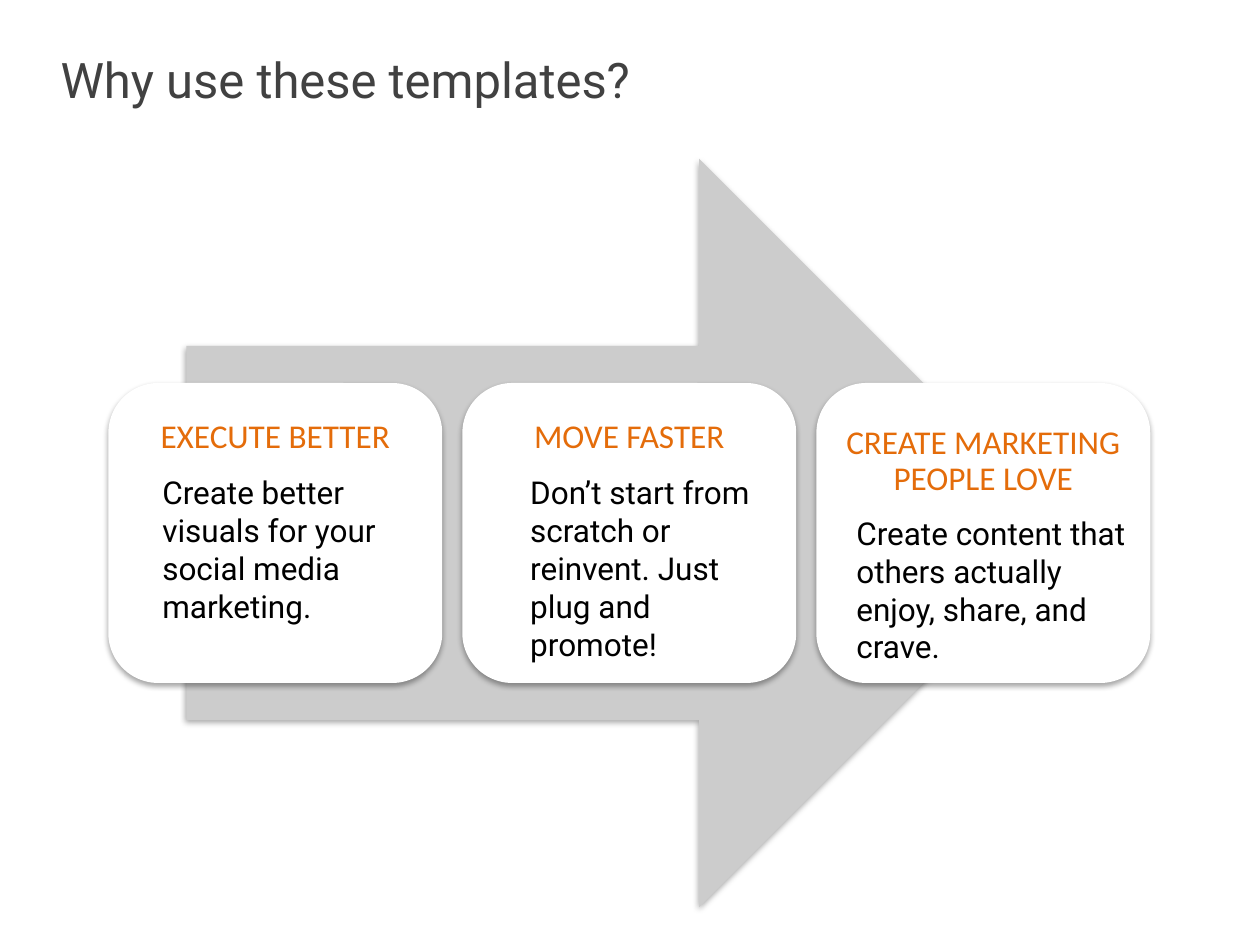
import lxml.etree
import pptx
import pptx.dml.color
import pptx.enum.shapes
import pptx.enum.text
import pptx.oxml.ns
import pptx.util

Pt = pptx.util.Pt
SHAPE = pptx.enum.shapes.MSO_SHAPE
ALIGN = pptx.enum.text.PP_ALIGN
CHARCOAL = pptx.dml.color.RGBColor(0x41, 0x41, 0x41)
GRAY = pptx.dml.color.RGBColor(0xCC, 0xCC, 0xCC)
WHITE = pptx.dml.color.RGBColor(0xFF, 0xFF, 0xFF)
ORANGE = pptx.dml.color.RGBColor(0xE4, 0x6C, 0x0A)
BLACK = pptx.dml.color.RGBColor(0, 0, 0)

CARD_WIDTH, CARD_HEIGHT, CARD_STEP = 190.8, 171.4, 202.3
CARDS = [
    ("EXECUTE BETTER", 21, "Create better visuals for your social media marketing.", 23.8, 48.2, 151.2),
    ("MOVE FASTER", 21, "Don’t start from scratch or reinvent. Just plug and promote!", 31.7, 48.2, 154.8),
    ("CREATE MARKETING PEOPLE LOVE", 24.5, "Create content that others actually enjoy, share, and crave.",
     15.8, 71.3, 175.7),
]


def write_text(frame, text, font_name, size, color, align=ALIGN.LEFT, spacing=1.0):
    """Fill a text frame with one wrapped, top-anchored paragraph."""
    frame.word_wrap = True
    frame.auto_size = pptx.enum.text.MSO_AUTO_SIZE.NONE
    frame.vertical_anchor = pptx.enum.text.MSO_ANCHOR.TOP
    para = frame.paragraphs[0]
    para.alignment = align
    para.line_spacing = spacing
    span = para.add_run()
    span.text = text
    span.font.name = font_name
    span.font.size = Pt(size)
    span.font.color.rgb = color


def add_shadowed_shape(page, kind, left, top, width, height, color):
    """Add a borderless filled shape with a soft shadow below it."""
    shape = page.shapes.add_shape(kind, Pt(left), Pt(top), Pt(width), Pt(height))
    shape.shadow.inherit = False
    shape.fill.solid()
    shape.fill.fore_color.rgb = color
    shape.line.fill.background()
    qn = pptx.oxml.ns.qn
    effects = shape.element.spPr.find(qn("a:effectLst"))
    shadow = lxml.etree.SubElement(
        effects, qn("a:outerShdw"), blurRad=str(Pt(3.1)), dist=str(Pt(1.8)),
        dir="5400000", rotWithShape="0")
    shade = lxml.etree.SubElement(shadow, qn("a:srgbClr"), val=str(BLACK))
    lxml.etree.SubElement(shade, qn("a:alpha"), val="35000")


def add_title(page, left, top, width, height):
    """Place and format the title placeholder."""
    title = page.shapes.title
    title.left, title.top = Pt(left), Pt(top)
    title.width, title.height = Pt(width), Pt(height)
    write_text(title.text_frame, "Why use these templates?", "Roboto", 28, CHARCOAL, spacing=0.8)


def add_card(page, left, top, heading, heading_top, body, body_left, body_top, body_width):
    """Add a rounded card with a heading and a body text."""
    add_shadowed_shape(page, SHAPE.ROUNDED_RECTANGLE, left, top, CARD_WIDTH, CARD_HEIGHT, WHITE)
    inset = 8.4
    heading_box = page.shapes.add_textbox(
        Pt(left + inset), Pt(top + heading_top - 3.6),
        Pt(CARD_WIDTH - 2 * inset), Pt(body_top - heading_top))
    heading_box.text_frame.margin_left = heading_box.text_frame.margin_right = Pt(5.8)
    write_text(heading_box.text_frame, heading, "Calibri", 19, ORANGE, ALIGN.CENTER, 0.9)
    body_box = page.shapes.add_textbox(
        Pt(left + body_left), Pt(top + body_top), Pt(body_width), Pt(CARD_HEIGHT - body_top))
    write_text(body_box.text_frame, body, "Roboto", 18, BLACK)


def add_process(page, left, top):
    """Add the large arrow with its row of cards in front."""
    add_shadowed_shape(page, SHAPE.RIGHT_ARROW, left + 44.6, top, 506.9, 427.7, GRAY)
    card_top = top + (427.7 - CARD_HEIGHT) / 2
    for index, card in enumerate(CARDS):
        add_card(page, left + index * CARD_STEP, card_top, *card)


def main():
    """Build and save the deck."""
    deck = pptx.Presentation()
    deck.slide_width, deck.slide_height = Pt(720), Pt(540)
    page = deck.slides.add_slide(deck.slide_layouts[5])
    add_title(page, 27.4, 31, 640.8, 68.4)
    add_process(page, 61.9, 90.7)
    deck.save("out.pptx")


if __name__ == "__main__":
    main()
